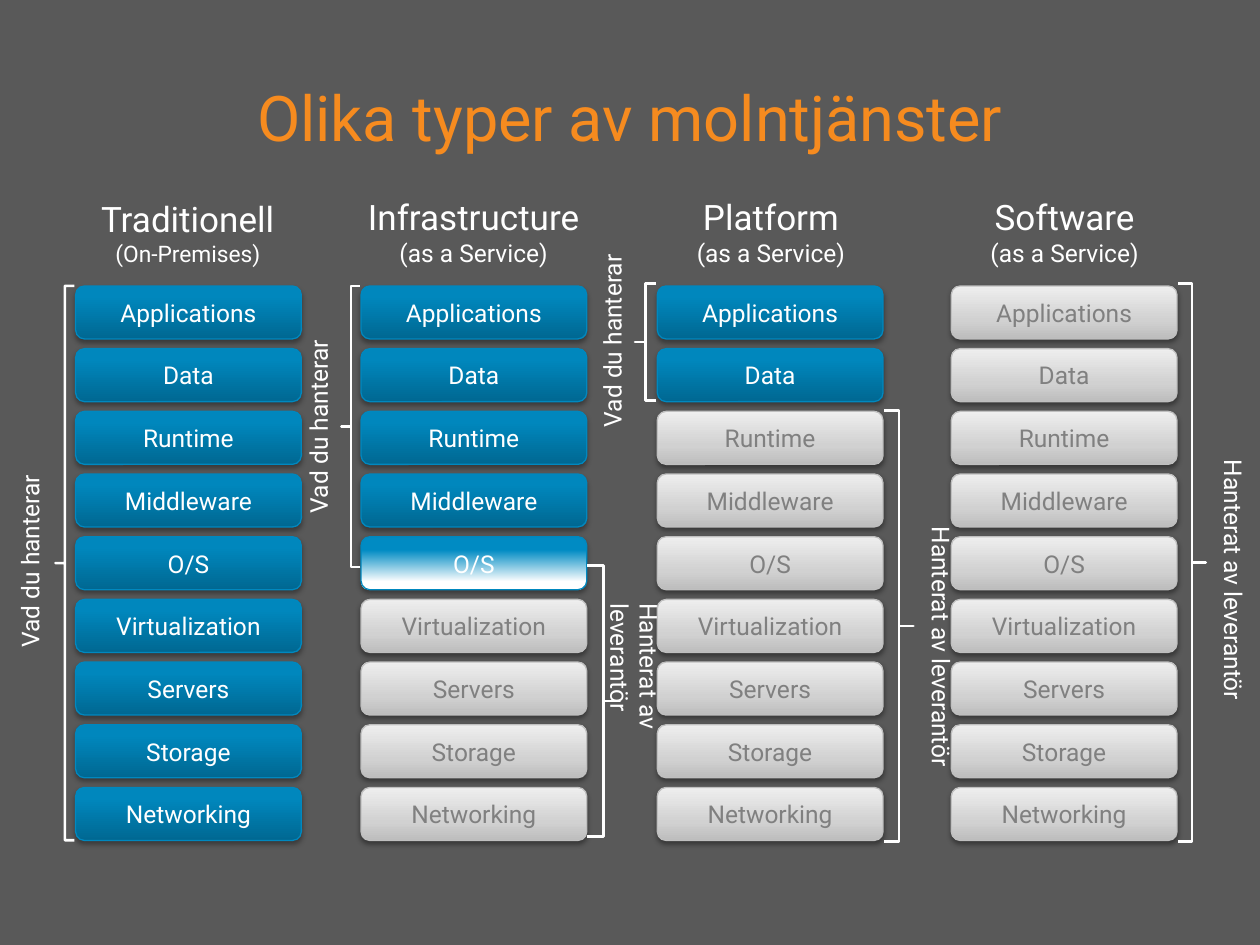
from dataclasses import dataclass

from lxml.etree import SubElement
from pptx import Presentation
from pptx.dml.color import RGBColor as RGB
from pptx.enum.shapes import MSO_SHAPE as SHAPE
from pptx.enum.text import MSO_ANCHOR as ANCHOR, MSO_AUTO_SIZE as FIT, PP_ALIGN as ALIGN
from pptx.oxml.ns import qn
from pptx.util import Pt


@dataclass(frozen=True)
class BoxLook:
    stops: tuple
    angle: int
    line: str
    text: str
    shadow_alpha: int
    shadow_dist: float


@dataclass(frozen=True)
class Theme:
    font: str = "Roboto"
    background: str = "595959"
    accent: str = "F68B1F"
    white: str = "FFFFFF"
    title: int = 36
    heading: int = 20
    body: int = 14
    small: int = 13
    own: BoxLook = BoxLook(((0, "006892"), (80, "0087BD"), (100, "0087BE")), 90, "0088BF", "FFFFFF", 35, 1.8)
    shared: BoxLook = BoxLook(((25, "008BC3"), (85, "FFFFFF")), 270, "0088BF", "FFFFFF", 35, 1.8)
    vendor: BoxLook = BoxLook(((0, "BDBDBD"), (35, "D1D1D1"), (100, "EEEEEE")), 90, "BFBFBF", "808080", 38, 1.6)


class Deck:
    def __init__(self, theme, slide):
        self.t, self.s = theme, slide
        fill = slide.background.fill
        fill.solid()
        fill.fore_color.rgb = RGB.from_string(theme.background)

    def fill_text(self, sp, lines, color, align, **frame):
        tf = sp.text_frame
        for name, value in frame.items():
            setattr(tf, name, value)
        for i, (text, size) in enumerate(lines):
            p = tf.paragraphs[0] if i == 0 else tf.add_paragraph()
            p.alignment = align
            r = p.add_run()
            r.text = text
            for name, value in {"name": self.t.font, "size": Pt(size)}.items():
                setattr(r.font, name, value)
            r.font.color.rgb = RGB.from_string(color)

    def text(self, at, lines, color, anchor):
        sp = self.s.shapes.add_textbox(*map(Pt, at))
        self.fill_text(sp, lines, color, ALIGN.CENTER, word_wrap=True, vertical_anchor=anchor)

    def label(self, at, text, vert, wrap):
        sp = self.s.shapes.add_textbox(*map(Pt, at))
        self.fill_text(sp, [(text, self.t.body)], self.t.white, ALIGN.LEFT,
                       word_wrap=wrap, auto_size=FIT.SHAPE_TO_FIT_TEXT)
        sp.text_frame._txBody.bodyPr.set("vert", vert)

    def brace(self, at, flip):
        sp = self.s.shapes.add_shape(SHAPE.LEFT_BRACE, *map(Pt, at))
        sp.adjustments[0], sp.adjustments[1] = 0, 0.5
        sp.shadow.inherit = False
        sp.fill.background()
        sp.line.color.rgb = RGB.from_string(self.t.white)
        sp.line.width = Pt(1.5)
        if flip:
            sp._element.spPr.get_or_add_xfrm().set("flipH", "1")

    def box(self, group, at, text, look):
        sp = group.shapes.add_shape(SHAPE.ROUNDED_RECTANGLE, *map(Pt, at))
        sp.shadow.inherit = False
        sp.fill.gradient()
        sp.fill.gradient_angle = look.angle
        spPr = sp._element.spPr
        stops = spPr.find(".//" + qn("a:gsLst"))
        for gs in list(stops):
            stops.remove(gs)
        for pos, color in look.stops:
            gs = SubElement(stops, qn("a:gs"), pos=str(pos * 1000))
            SubElement(gs, qn("a:srgbClr"), val=color)
        sp.line.color.rgb = RGB.from_string(look.line)
        sp.line.width = Pt(0.75)
        shadow = SubElement(spPr.find(qn("a:effectLst")), qn("a:outerShdw"), blurRad=str(int(Pt(3.1))),
                            dist=str(int(Pt(look.shadow_dist))), dir="5400000", rotWithShape="0")
        color = SubElement(shadow, qn("a:srgbClr"), val="000000")
        SubElement(color, qn("a:alpha"), val=str(look.shadow_alpha * 1000))
        self.fill_text(sp, [(text, self.t.body)], look.text, ALIGN.CENTER, vertical_anchor=ANCHOR.MIDDLE)

    def stack(self, x, looks):
        group = self.s.shapes.add_group_shape()
        for i, (layer, look) in enumerate(zip(LAYERS, looks)):
            self.box(group, (x, TOP + i * PITCH, BOX_W, BOX_H), layer, look)


TOP, PITCH, BOX_W, BOX_H = 163.4, 35.82, 129, 30.3
LAYERS = ["Applications", "Data", "Runtime", "Middleware", "O/S",
          "Virtualization", "Servers", "Storage", "Networking"]
YOU, VENDOR = "Vad du hanterar", "Hanterat av leverantör"


def main():
    t = Theme()
    prs = Presentation()
    prs.slide_width, prs.slide_height = Pt(720), Pt(540)
    d = Deck(t, prs.slides.add_slide(prs.slide_layouts[6]))

    d.text((36, 21.6, 648, 90), [("Olika typer av molntjänster", t.title)], t.accent, ANCHOR.MIDDLE)

    service = ("(as a Service)", t.body)
    columns = [
        ("Traditionell", ("(On-Premises)", t.small), 42.5, 129.6, 43.2, [t.own] * 9),
        ("Infrastructure", service, 195.8, 149.8, 206.3, [t.own] * 4 + [t.shared] + [t.vendor] * 4),
        ("Platform", service, 386.6, 108, 375.6, [t.own] * 2 + [t.vendor] * 7),
        ("Software", service, 554.4, 108, 543.6, [t.vendor] * 9),
    ]
    for name, note, head_x, head_w, x, looks in columns:
        d.text((head_x, 102.2, head_w, 54), [(name, t.heading), note], t.white, ANCHOR.BOTTOM)
        d.stack(x, looks)

    you_manage = [
        ((31.7, 163.4, 10.8, 316.8), (5, 270, 31.7, 107.3)),
        ((195.1, 163.4, 10.8, 160.6), (169.9, 193, 31.7, 107.3)),
        ((362.9, 162, 12.2, 67), (337.7, 144, 31.7, 107.3)),
    ]
    for brace, label in you_manage:
        d.brace(brace, False)
        d.label(label, YOU, "vert270", False)

    vendor_manages = [
        ((335.5, 323.3, 18.7, 154.8), (351.4, 337.7, 31.7, 148.3), True),
        ((505.4, 234.7, 16.6, 246.2), (518.4, 293.8, 31.7, 146.2), False),
        ((673.2, 162, 15.8, 319), (685.4, 255.6, 31.7, 146.2), False),
    ]
    for brace, label, wrap in vendor_manages:
        d.brace(brace, True)
        d.label(label, VENDOR, "eaVert", wrap)

    prs.save("out.pptx")


if __name__ == "__main__":
    main()
